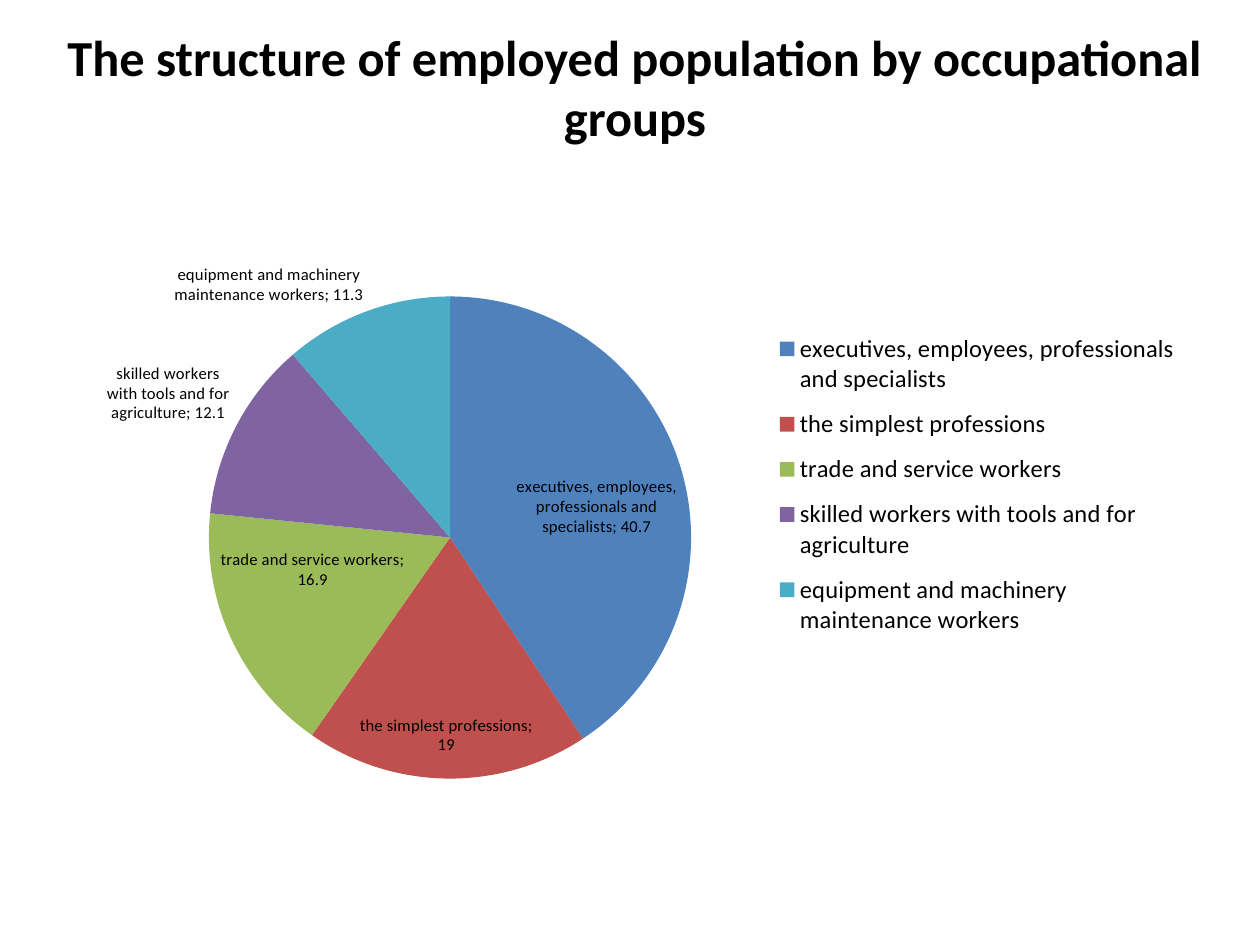
from dataclasses import dataclass

from lxml import etree
from pptx import Presentation
from pptx.chart.data import CategoryChartData
from pptx.dml.color import RGBColor
from pptx.enum.chart import XL_CHART_TYPE, XL_LABEL_POSITION, XL_LEGEND_POSITION
from pptx.enum.text import MSO_ANCHOR, PP_ALIGN
from pptx.oxml import parse_xml
from pptx.oxml.ns import nsdecls, qn
from pptx.util import Inches, Pt

PIE = XL_CHART_TYPE.PIE
BEST_FIT = XL_LABEL_POSITION.BEST_FIT
RIGHT = XL_LEGEND_POSITION.RIGHT
MIDDLE = MSO_ANCHOR.MIDDLE
CENTER = PP_ALIGN.CENTER

BLACK = RGBColor(0x00, 0x00, 0x00)
BLUE = RGBColor(0x4F, 0x81, 0xBD)
RED = RGBColor(0xC0, 0x50, 0x4D)
GREEN = RGBColor(0x9B, 0xBB, 0x59)
PURPLE = RGBColor(0x80, 0x64, 0xA2)
TEAL = RGBColor(0x4B, 0xAC, 0xC6)
FONT = "Calibri"
TITLE = "The structure of employed population by occupational groups"


@dataclass
class Group:
    name: str
    share: float
    color: RGBColor


GROUPS = [
    Group("executives, employees, professionals and specialists", 40.7, BLUE),
    Group("the simplest professions", 19, RED),
    Group("trade and service workers", 16.9, GREEN),
    Group("skilled workers with tools and for agriculture", 12.1, PURPLE),
    Group("equipment and machinery maintenance workers", 11.3, TEAL),
]


def style_font(font, size: float, bold: bool = False) -> None:
    font.name = FONT
    font.size = Pt(size)
    font.bold = bold
    font.color.rgb = BLACK


def manual_layout(x: float, y: float, width: float, height: float, inner: bool = False):
    """Layout element placed by fractions of the chart's size."""
    target = '<c:layoutTarget val="inner"/>' if inner else ""
    return parse_xml(
        f'<c:layout {nsdecls("c")}><c:manualLayout>{target}'
        '<c:xMode val="edge"/><c:yMode val="edge"/>'
        f'<c:x val="{x}"/><c:y val="{y}"/><c:w val="{width}"/><c:h val="{height}"/>'
        "</c:manualLayout></c:layout>"
    )


def add_title(page) -> None:
    box = page.shapes.add_textbox(Inches(0.2), Inches(0.3), Inches(9.68), Inches(0.77))
    frame = box.text_frame
    frame.word_wrap = True
    frame.vertical_anchor = MIDDLE
    frame.text = TITLE
    para = frame.paragraphs[0]
    para.alignment = CENTER
    style_font(para.runs[0].font, 28.8, bold=True)


def add_pie(page) -> None:
    data = CategoryChartData()
    data.categories = [group.name for group in GROUPS]
    data.add_series("Series 1", [group.share for group in GROUPS])
    chart = page.shapes.add_chart(
        PIE, Inches(0.59), Inches(1.39), Inches(8.9), Inches(4.96), data
    ).chart
    chart.has_title = False
    style_font(chart.font, 10)

    plot = chart.plots[0]
    plot.vary_by_categories = True
    for index, group in enumerate(GROUPS):
        fill = plot.series[0].points[index].format.fill
        fill.solid()
        fill.fore_color.rgb = group.color

    plot.has_data_labels = True
    labels = plot.data_labels
    labels.show_value = True
    labels.show_category_name = True
    labels.show_percentage = False
    labels.position = BEST_FIT
    style_font(labels.font, 9.5)
    separator = etree.Element(qn("c:separator"))
    separator.text = "; "
    chart.element.find(".//" + qn("c:showBubbleSize")).addnext(separator)

    chart.has_legend = True
    legend = chart.legend
    legend.position = RIGHT
    legend.include_in_layout = False
    style_font(legend.font, 14)

    plot_area = chart.element.find(".//" + qn("c:plotArea"))
    legend_position = chart.element.find(".//" + qn("c:legendPos"))
    for element in (plot_area, legend_position.getparent()):
        for layout in element.findall(qn("c:layout")):
            element.remove(layout)
    plot_area.insert(0, manual_layout(0.12, 0.19, 0.43, 0.78, inner=True))
    legend_position.addnext(manual_layout(0.62, 0.23, 0.37, 0.53))


def main() -> None:
    deck = Presentation()
    deck.slide_width = Inches(10)
    deck.slide_height = Inches(7.5)
    page = deck.slides.add_slide(deck.slide_layouts[6])
    add_title(page)
    add_pie(page)
    deck.save("out.pptx")


if __name__ == "__main__":
    main()
